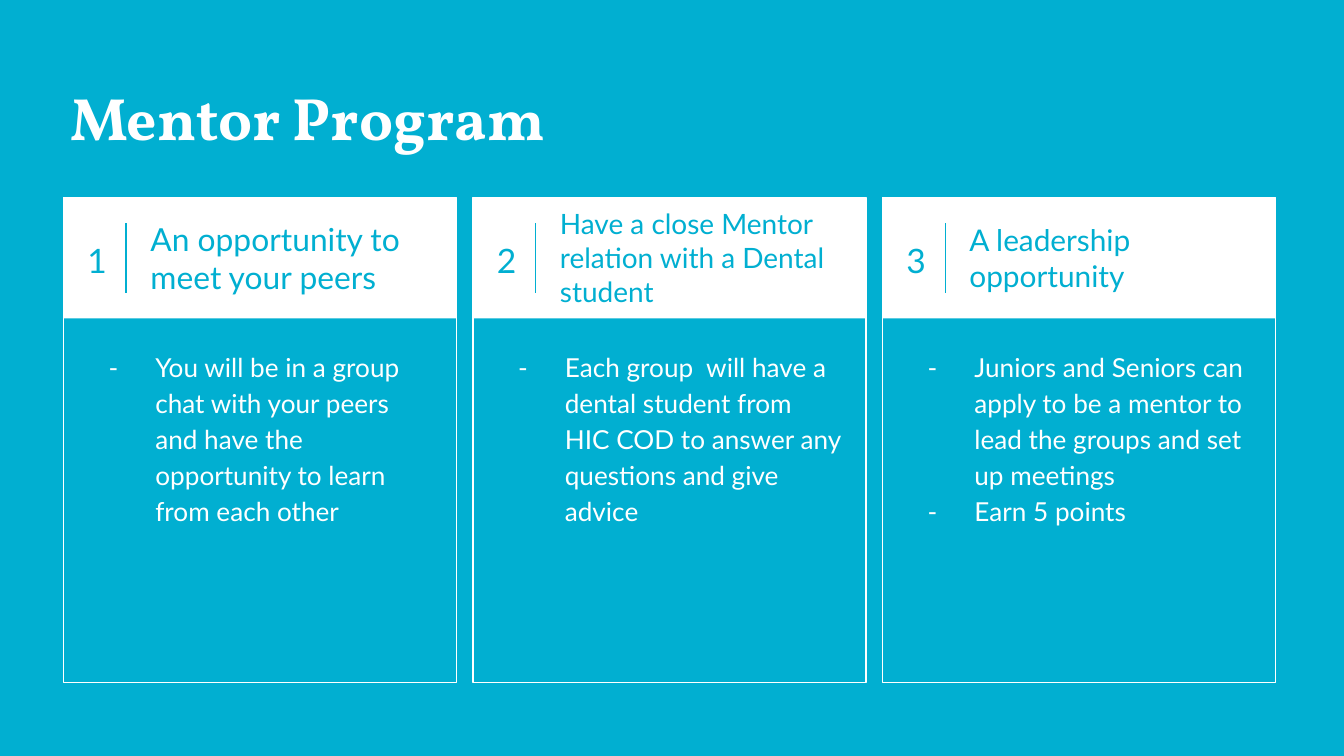
from lxml.etree import SubElement
from pptx import Presentation
from pptx.dml.color import RGBColor
from pptx.enum.shapes import MSO_CONNECTOR, MSO_SHAPE
from pptx.enum.text import MSO_ANCHOR as ANCHOR, PP_ALIGN as ALIGN
from pptx.oxml.ns import qn
from pptx.util import Pt

TITLE = "Mentor Program"
# heading, heading size, bullet points
CARDS = [
    ("An opportunity to meet your peers", 17,
     ["You will be in a group chat with your peers and have the "
      "opportunity to learn from each other"]),
    ("Have a close Mentor relation with a Dental student", 15,
     ["Each group  will have a dental student from HIC COD to answer any "
      "questions and give advice"]),
    ("A leadership opportunity", 16,
     ["Juniors and Seniors can  apply to be a mentor to lead the groups "
      "and set up meetings",
      "Earn 5 points"]),
]

BLUE, WHITE = "01AFD1", "FFFFFF"
CARD_LEFT, CARD_TOP, CARD_PITCH = 34, 105.8, 219.4
CARD_WIDTH, CARD_HEIGHT, HEADER_HEIGHT = 210.6, 260, 64.8


def color(hex_code):
    return RGBColor.from_string(hex_code)


def add_text(slide, box, lines, size, hex_code, font="Lato", bold=False,
             anchor=ANCHOR.TOP, align=ALIGN.LEFT, spacing=1.0, dashes=False):
    frame = slide.shapes.add_textbox(*map(Pt, box)).text_frame
    frame.word_wrap = True
    frame.vertical_anchor = anchor
    frame.margin_left = frame.margin_right = Pt(7.2)
    frame.margin_top = frame.margin_bottom = Pt(7.2)
    for number, line in enumerate(lines):
        paragraph = frame.add_paragraph() if number else frame.paragraphs[0]
        paragraph.alignment = align
        paragraph.line_spacing = spacing
        run = paragraph.add_run()
        run.text = line
        run.font.name, run.font.size, run.font.bold = font, Pt(size), bold
        run.font.color.rgb = color(hex_code)
        if dashes:
            add_dash(paragraph, hex_code)


def add_dash(paragraph, hex_code):
    """Give the paragraph a dash bullet with a hanging indent."""
    props = paragraph._p.get_or_add_pPr()
    props.set("marL", str(Pt(36)))
    props.set("indent", str(-Pt(25)))
    SubElement(SubElement(props, qn("a:buClr")), qn("a:srgbClr"), val=hex_code)
    SubElement(props, qn("a:buFont"), typeface="Lato")
    SubElement(props, qn("a:buChar"), char="-")


def add_panel(group, left, height):
    panel = group.shapes.add_shape(
        MSO_SHAPE.RECTANGLE, Pt(left), Pt(CARD_TOP), Pt(CARD_WIDTH), Pt(height))
    panel.shadow.inherit = False
    return panel


def add_divider(slide, x):
    divider = slide.shapes.add_connector(
        MSO_CONNECTOR.STRAIGHT, Pt(x), Pt(119.5), Pt(x), Pt(157))
    divider.line.color.rgb = color(BLUE)
    divider.line.width = Pt(0.75)
    SubElement(divider._element.spPr, qn("a:effectLst"))


def add_card(slide, number, left, heading, heading_size, points):
    group = slide.shapes.add_group_shape()
    outline = add_panel(group, left, CARD_HEIGHT)
    outline.fill.background()
    outline.line.color.rgb = color(WHITE)
    outline.line.width = Pt(0.75)
    header = add_panel(group, left, HEADER_HEIGHT)
    header.fill.solid()
    header.fill.fore_color.rgb = color(WHITE)
    header.line.fill.background()

    add_text(slide, (left + 4.3, 105.3, 27.4, HEADER_HEIGHT), [str(number)], 18,
             BLUE, anchor=ANCHOR.MIDDLE, align=ALIGN.CENTER, spacing=1.15)
    add_divider(slide, left + 33.6)
    add_text(slide, (left + 39.5, 105.5, 165.6, HEADER_HEIGHT), [heading],
             heading_size, BLUE, anchor=ANCHOR.MIDDLE)
    add_text(slide, (left + 6.1, 178.6, 198.8, 187.2), points, 14, WHITE,
             spacing=1.15, dashes=True)


def main():
    deck = Presentation()
    deck.slide_width, deck.slide_height = Pt(720), Pt(405)
    slide = deck.slides.add_slide(deck.slide_layouts[6])
    slide.background.fill.solid()
    slide.background.fill.fore_color.rgb = color(BLUE)

    add_text(slide, (30.5, 36, 658.8, 54), [TITLE], 32, WHITE,
             font="Vollkorn", bold=True)
    for index, card in enumerate(CARDS):
        add_card(slide, index + 1, CARD_LEFT + index * CARD_PITCH, *card)
    deck.save("out.pptx")


if __name__ == "__main__":
    main()
